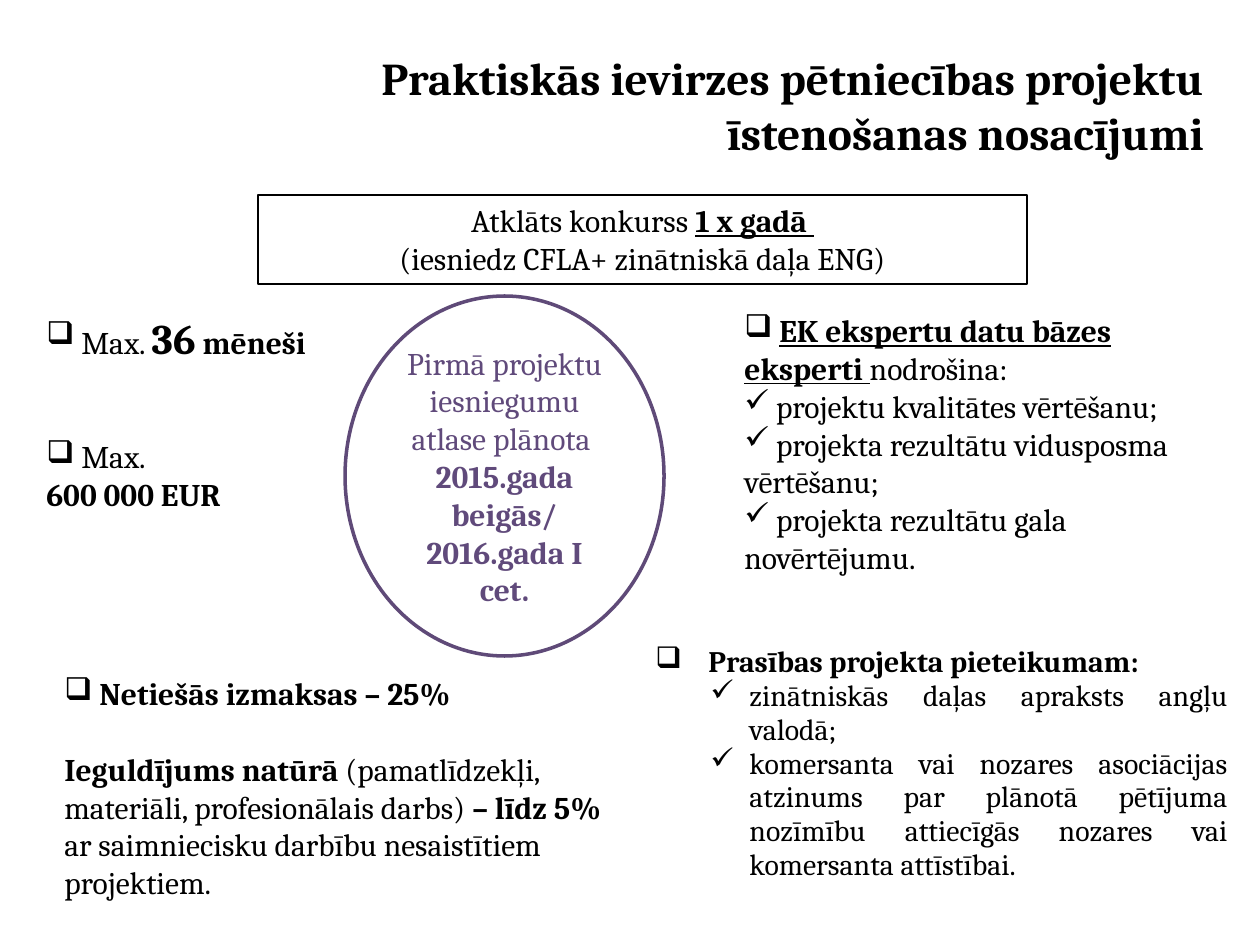
from pptx import Presentation
from pptx import util as u
from pptx.dml.color import RGBColor
from pptx.enum import shapes, text
from lxml import etree

PX = 914400 / 126
NS = "{http://schemas.openxmlformats.org/drawingml/2006/main}"
COLORS = {"ink": "000000", "paper": "FFFFFF", "ring": "5F4A78", "violet": "604A7B"}
BOLD = {"bold": True}
LINK = {"bold": True, "underline": True}
SMALL = {"size": u.Pt(17)}
BOX, TICK = "❑", "✓"


def px(n):
    return u.Emu(round(n * PX))


def rgb(name):
    return RGBColor.from_string(COLORS[name])


def set_attrs(obj, values):
    for name, value in values.items():
        setattr(obj, name, value)


def add_bullet(p, char, margin=0, hang=0):
    pPr = p._p.get_or_add_pPr()
    pPr.set("marL", str(px(margin)))
    pPr.set("indent", str(px(-hang)))
    etree.SubElement(pPr, NS + "buChar").set("char", char)


def write(sp, paragraphs, color="ink", anchor=text.MSO_ANCHOR.TOP):
    tf = sp.text_frame
    set_attrs(tf, {"word_wrap": True, "vertical_anchor": anchor,
                   "auto_size": text.MSO_AUTO_SIZE.NONE})
    for i, (bullet, form, runs) in enumerate(paragraphs):
        p = tf.paragraphs[0] if i == 0 else tf.add_paragraph()
        if bullet:
            add_bullet(p, *bullet)
        set_attrs(p, form)
        for words, style in runs:
            r = p.add_run()
            r.text = words
            set_attrs(r.font, {"name": "Cambria", "size": u.Pt(18), "bold": False, **style})
            r.font.color.rgb = rgb(color)


def text_box(s, box, paragraphs):
    write(s.shapes.add_textbox(*map(px, box)), paragraphs)


def outlined(s, kind, box, line, width):
    sp = s.shapes.add_shape(kind, *map(px, box))
    sp.shadow.inherit = False
    sp.line.color.rgb = rgb(line)
    sp.line.width = u.Pt(width)
    return sp


def title(s, box):
    sp = s.shapes.title
    set_attrs(sp, dict(zip(("left", "top", "width", "height"), map(px, box))))
    write(sp, [(None, {"alignment": text.PP_ALIGN.RIGHT},
                [("Praktiskās ievirzes pētniecības projektu īstenošanas nosacījumi",
                  {"size": u.Pt(26), "bold": True})])])


def call_banner(s, box):
    sp = outlined(s, shapes.MSO_SHAPE.RECTANGLE, box, "ink", 0.75)
    sp.fill.background()
    center = {"alignment": text.PP_ALIGN.CENTER}
    write(sp, [
        (None, center, [("Atklāts konkurss ", {}), ("1 x gadā ", LINK)]),
        (None, center, [("(iesniedz CFLA+ zinātniskā daļa ENG)", {})]),
    ])


def first_call(s, box):
    sp = outlined(s, shapes.MSO_SHAPE.OVAL, box, "ring", 2)
    sp.fill.solid()
    sp.fill.fore_color.rgb = rgb("paper")
    center = {"alignment": text.PP_ALIGN.CENTER}
    write(sp, [
        (None, center, [("Pirmā projektu iesniegumu atlase plānota ", {})]),
        (None, center, [("2015.gada beigās/ 2016.gada I cet.", BOLD)]),
    ], "violet", text.MSO_ANCHOR.MIDDLE)


def limits(s, box):
    left, top, width, height = box
    text_box(s, (left, top, width, 63), [
        ((BOX,), {}, [(" Max. ", {}), ("36", {"size": u.Pt(24), "bold": True}),
                      (" mēneši", BOLD)])])
    text_box(s, (left, top + 125, width, height - 125), [
        ((BOX,), {}, [(" Max.", {})]),
        (None, {}, [("600 000 EUR", BOLD)])])


def costs(s, box):
    text_box(s, box, [
        ((BOX,), {}, [(" ", {}), ("Netiešās izmaksas – 25%", BOLD)]),
        (None, {"space_before": u.Pt(21.6)}, [
            ("Ieguldījums natūrā ", BOLD),
            ("(pamatlīdzekļi, materiāli, profesionālais darbs) ", {}),
            ("– līdz 5%", BOLD),
            (" ar saimniecisku darbību nesaistītiem projektiem.", {})]),
    ])


def experts(s, box):
    tasks = ("projektu kvalitātes vērtēšanu;", "projekta rezultātu vidusposma vērtēšanu;",
             "projekta rezultātu gala novērtējumu.")
    heading = ((BOX,), {}, [(" ", {}), ("EK ekspertu datu bāzes eksperti ", LINK),
                            ("nodrošina:", {})])
    text_box(s, box, [heading] + [((TICK,), {}, [(" " + t, {})]) for t in tasks])


def requirements(s, box):
    items = ("zinātniskās daļas apraksts angļu valodā; ",
             "komersanta vai nozares asociācijas atzinums par plānotā pētījuma nozīmību "
             "attiecīgās nozares vai komersanta attīstībai.")
    form = {"line_spacing": 0.95}
    sub = {**form, "level": 1, "alignment": text.PP_ALIGN.JUSTIFY}
    heading = ((BOX, 53, 53), form, [("Prasības projekta pieteikumam:", {**SMALL, **BOLD})])
    text_box(s, box, [heading] + [((TICK, 94, 39), sub, [(t, SMALL)]) for t in items])


def main():
    prs = Presentation()
    prs.slide_width, prs.slide_height = px(1260), px(945)
    s = prs.slides.add_slide(prs.slide_layouts[5])
    title(s, (180, 44, 1037, 142))
    first_call(s, (345, 296, 319, 360))
    limits(s, (34, 306, 328, 214))
    costs(s, (52, 668, 567, 242))
    experts(s, (732, 305, 485, 280))
    requirements(s, (643, 639, 597, 254))
    call_banner(s, (258, 195, 769, 89))
    prs.save("out.pptx")


if __name__ == "__main__":
    main()
